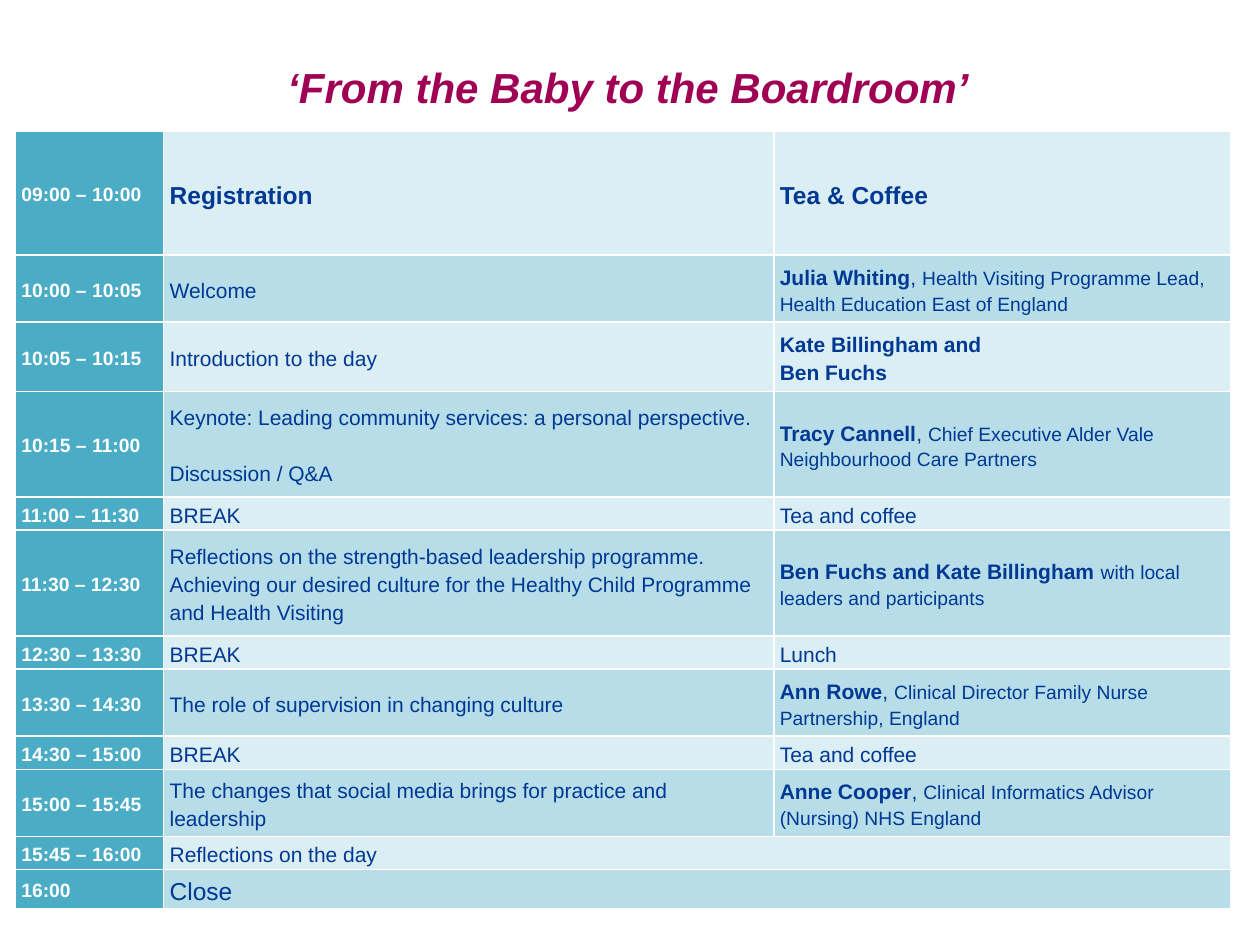
from lxml.etree import SubElement
from pptx import Presentation
from pptx.dml.color import RGBColor
from pptx.enum.text import MSO_ANCHOR, MSO_AUTO_SIZE, PP_ALIGN
from pptx.oxml.ns import qn
from pptx.util import Cm, Pt

COLORS = {
    "title": "A00054",
    "text": "003893",
    "time_text": "FFFFFF",
    "time_fill": "4BACC6",
    "light": "DAEEF3",
    "dark": "B6DDE8",
    "border": "FFFFFF",
}
# Size and weight of each kind of text
STYLES = {
    "time": (11, True),
    "heading": (14, True),
    "plain": (12, False),
    "name": (12, True),
    "role": (11, False),
    "close": (14, False),
}


def speaker(name, role):
    return [[("name", name), ("plain", ", "), ("role", role)]]


def fill_cell(cell, paragraphs, text_color, fill_color):
    cell.fill.solid()
    cell.fill.fore_color.rgb = RGBColor.from_string(COLORS[fill_color])
    cell.vertical_anchor = MSO_ANCHOR.MIDDLE
    cell.margin_left = cell.margin_right = Cm(0.12)
    cell.margin_top = cell.margin_bottom = 0
    frame = cell.text_frame
    for number, pieces in enumerate(paragraphs):
        paragraph = frame.add_paragraph() if number else frame.paragraphs[0]
        paragraph.line_spacing = 1.19
        paragraph.font.name = "Arial"
        paragraph.font.color.rgb = RGBColor.from_string(COLORS[text_color])
        for style, words in pieces:
            run = paragraph.add_run()
            run.text = words
            font = paragraph.font if len(pieces) == 1 else run.font
            size, font.bold = STYLES[style]
            font.size = Pt(size)
    # White rules; the fill has to follow them in the cell properties
    properties = cell._tc.get_or_add_tcPr()
    for position, side in enumerate(("a:lnL", "a:lnR", "a:lnT", "a:lnB")):
        line = SubElement(properties, qn(side), w=str(Pt(1)))
        color = SubElement(SubElement(line, qn("a:solidFill")), qn("a:srgbClr"))
        color.set("val", COLORS["border"])
        properties.insert(position, line)


# Row height in cm, time, session, people; no people means a merged session cell
BREAK = [[("plain", "BREAK")]]
COFFEE = [[("plain", "Tea and coffee")]]
AGENDA = [
    (2.49, "09:00 – 10:00", [[("heading", "Registration")]], [[("heading", "Tea & Coffee")]]),
    (1.35, "10:00 – 10:05", [[("plain", "Welcome")]],
     speaker("Julia Whiting", "Health Visiting Programme Lead, Health Education East of England")),
    (1.4, "10:05 – 10:15", [[("plain", "Introduction to the day")]],
     [[("name", "Kate Billingham and")], [("name", "Ben Fuchs")]]),
    (2.13, "10:15 – 11:00",
     [[("plain", "Keynote: Leading community services: a personal perspective.")],
      [("plain", "Discussion / Q&A")]],
     speaker("Tracy Cannell", "Chief Executive Alder Vale Neighbourhood Care Partners")),
    (0.67, "11:00 – 11:30", BREAK, COFFEE),
    (2.13, "11:30 – 12:30",
     [[("plain", "Reflections on the strength-based leadership programme.")],
      [("plain", "Achieving our desired culture for the Healthy Child Programme and Health Visiting")]],
     [[("name", "Ben Fuchs and Kate Billingham "), ("role", "with local leaders and participants")]]),
    (0.67, "12:30 – 13:30", BREAK, [[("plain", "Lunch")]]),
    (1.35, "13:30 – 14:30", [[("plain", "The role of supervision in changing culture")]],
     speaker("Ann Rowe", "Clinical Director Family Nurse Partnership, England")),
    (0.67, "14:30 – 15:00", BREAK, COFFEE),
    (1.35, "15:00 – 15:45",
     [[("plain", "The changes that social media brings for practice and leadership")]],
     speaker("Anne Cooper", "Clinical Informatics Advisor (Nursing) NHS England")),
    (0.67, "15:45 – 16:00", [[("plain", "Reflections on the day")]], None),
    (0.79, "16:00", [[("close", "Close")]], None),
]

presentation = Presentation()
presentation.slide_width, presentation.slide_height = Cm(25.4), Cm(19.05)
slide = presentation.slides.add_slide(presentation.slide_layouts[5])

# Title
title = slide.shapes.title
title.left, title.top, title.width, title.height = Cm(-0.08), Cm(1.12), Cm(25.48), Cm(2.06)
title.text_frame.text = "‘From the Baby to the Boardroom’"
title.text_frame.auto_size = MSO_AUTO_SIZE.NONE
title.text_frame.vertical_anchor = MSO_ANCHOR.TOP
heading = title.text_frame.paragraphs[0]
heading.alignment = PP_ALIGN.CENTER
heading.font.name = "Arial"
heading.font.size = Pt(24)
heading.font.bold = heading.font.italic = True
heading.font.color.rgb = RGBColor.from_string(COLORS["title"])

# Agenda table
agenda = slide.shapes.add_table(len(AGENDA), 3, Cm(0.31), Cm(2.65), Cm(24.51), Cm(15.67)).table
agenda.first_row = agenda.horz_banding = False
for column, width in zip(agenda.columns, (2.99, 12.3, 9.22)):
    column.width = Cm(width)

for index, (height, time, session, people) in enumerate(AGENDA):
    agenda.rows[index].height = Cm(height)
    time_cell, session_cell, people_cell = agenda.rows[index].cells
    band = "dark" if index % 2 else "light"
    fill_cell(time_cell, [[("time", time)]], "time_text", "time_fill")
    fill_cell(session_cell, session, "text", band)
    if people:
        fill_cell(people_cell, people, "text", band)
    else:
        session_cell.merge(people_cell)

# One line of space between the keynote and its discussion
agenda.cell(3, 1).text_frame.paragraphs[1].space_before = Pt(16)

presentation.save("out.pptx")
